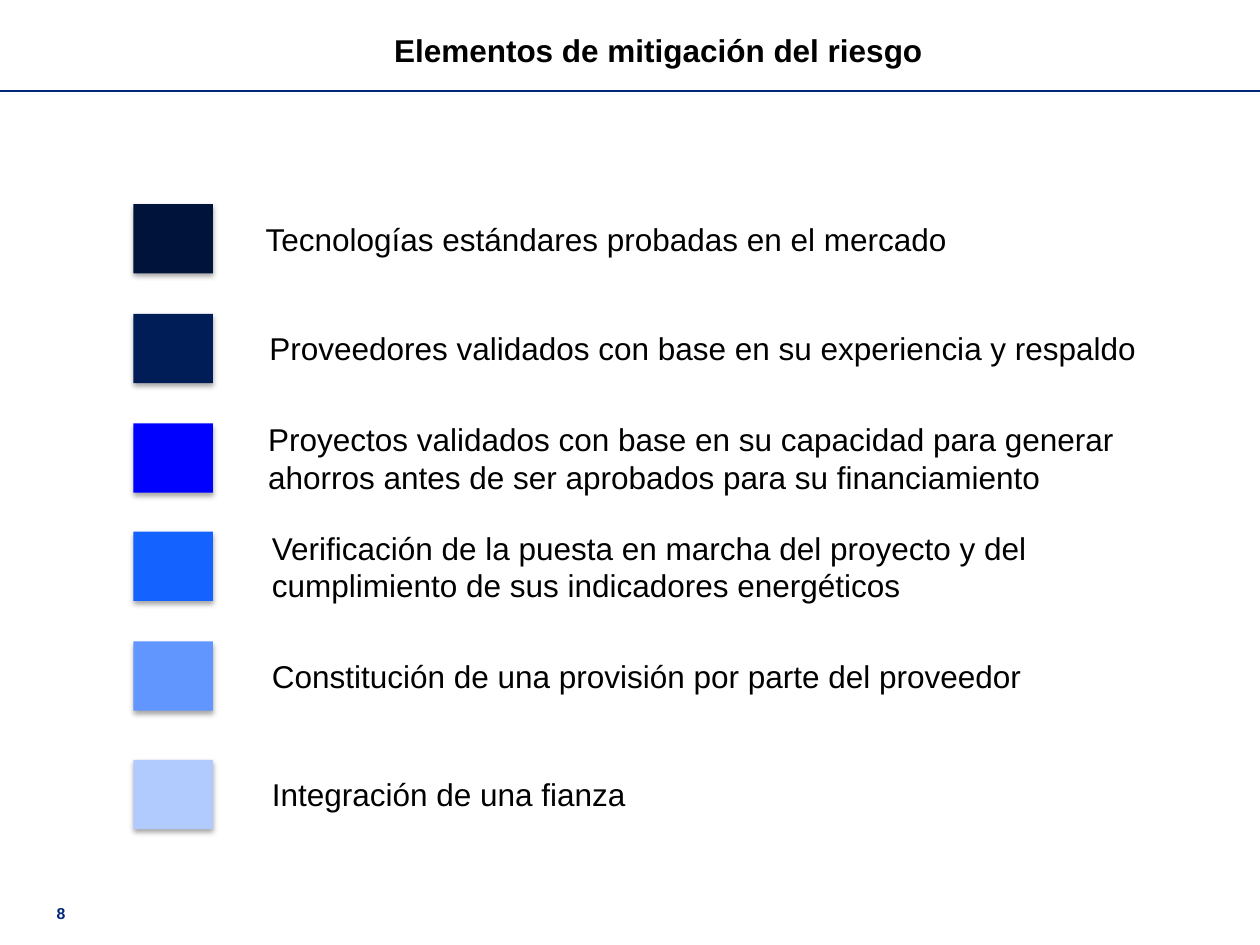
import pptx
import pptx.util
import pptx.dml.color
import pptx.enum.shapes
import pptx.enum.text
import pptx.oxml
import pptx.oxml.ns
from pptx.util import Inches

COLORS = {"text": "000000", "navy": "002776"}
SWATCH_W, SWATCH_H = 0.63, 0.55
SHADOW = (
    '<a:outerShdw %s blurRad="%d" dist="%d" dir="5400000" rotWithShape="0">'
    '<a:srgbClr val="000000"><a:alpha val="35000"/></a:srgbClr></a:outerShdw>'
    % (pptx.oxml.ns.nsdecls("a"), pptx.util.Pt(3.1), pptx.util.Pt(1.8))
)
ROWS = [
    (1.62, "00143B", 2.01, 5.66, 0.4, "Tecnologías estándares probadas en el mercado"),
    (2.49, "001D58", 2.04, 7.15, 0.4,
     "Proveedores validados con base en su experiencia y respaldo"),
    (3.36, "0000FF", 2.03, 7.07, 0.71,
     "Proyectos validados con base en su capacidad para generar "
     "ahorros antes de ser aprobados para su financiamiento"),
    (4.22, "1462FF", 2.06, 7.07, 0.71,
     "Verificación de la puesta en marcha del proyecto y del "
     "cumplimiento de sus indicadores energéticos"),
    (5.09, "6296FF", 2.06, 6.67, 0.4,
     "Constitución de una provisión por parte del proveedor"),
    (6.03, "B1CBFF", 2.06, 3.04, 0.4, "Integración de una fianza"),
]


def rgb(value):
    return pptx.dml.color.RGBColor.from_string(value)


def add_text(s, box, text, size=18, color="text", bold=False):
    sp = s.shapes.add_textbox(*map(Inches, box))
    tf = sp.text_frame
    tf.word_wrap = True
    tf.vertical_anchor = pptx.enum.text.MSO_ANCHOR.MIDDLE
    p = tf.paragraphs[0]
    p.text = text
    p.font.name = "Arial"
    p.font.size = pptx.util.Pt(size)
    p.font.bold = bold
    p.font.color.rgb = rgb(COLORS[color])
    return tf


def add_header(s, left, top, width, height):
    line_y = Inches(top + height)
    line = s.shapes.add_connector(
        pptx.enum.shapes.MSO_CONNECTOR.STRAIGHT,
        Inches(left), line_y, Inches(left + width), line_y)
    line.line.color.rgb = rgb(COLORS["navy"])
    line.line.width = pptx.util.Pt(1)
    line._element.spPr.append(
        pptx.oxml.parse_xml("<a:effectLst %s/>" % pptx.oxml.ns.nsdecls("a")))
    add_text(s, (left + 3.03, top + 0.2, 4.44, 0.4),
             "Elementos de mitigación del riesgo", bold=True)


def add_row(s, left, top, color, text_left, text_width, text_height, text):
    sp = s.shapes.add_shape(
        pptx.enum.shapes.MSO_SHAPE.RECTANGLE,
        *map(Inches, (left, top, SWATCH_W, SWATCH_H)))
    sp.fill.solid()
    sp.fill.fore_color.rgb = rgb(color)
    sp.line.fill.background()
    sp.shadow.inherit = False
    effects = sp._element.spPr.find(pptx.oxml.ns.qn("a:effectLst"))
    effects.append(pptx.oxml.parse_xml(SHADOW))
    text_top = top + (SWATCH_H - text_height) / 2
    add_text(s, (text_left, text_top, text_width, text_height), text)


def add_page_number(s, left, top, width, height):
    tf = add_text(s, (left, top, width, height), "8", 9, "navy", True)
    tf.margin_left = tf.margin_right = tf.margin_top = tf.margin_bottom = 0
    tf.vertical_anchor = pptx.enum.text.MSO_ANCHOR.TOP
    tf.paragraphs[0].line_spacing = pptx.util.Pt(10.8)


def main():
    prs = pptx.Presentation()
    prs.slide_width, prs.slide_height = Inches(10), Inches(7.5)
    s = prs.slides.add_slide(prs.slide_layouts[6])
    add_header(s, 0, 0, 10, 0.72)
    for row in ROWS:
        add_row(s, 1.06, *row)
    add_page_number(s, 0.45, 7.17, 0.31, 0.16)
    prs.save("out.pptx")


if __name__ == "__main__":
    main()
